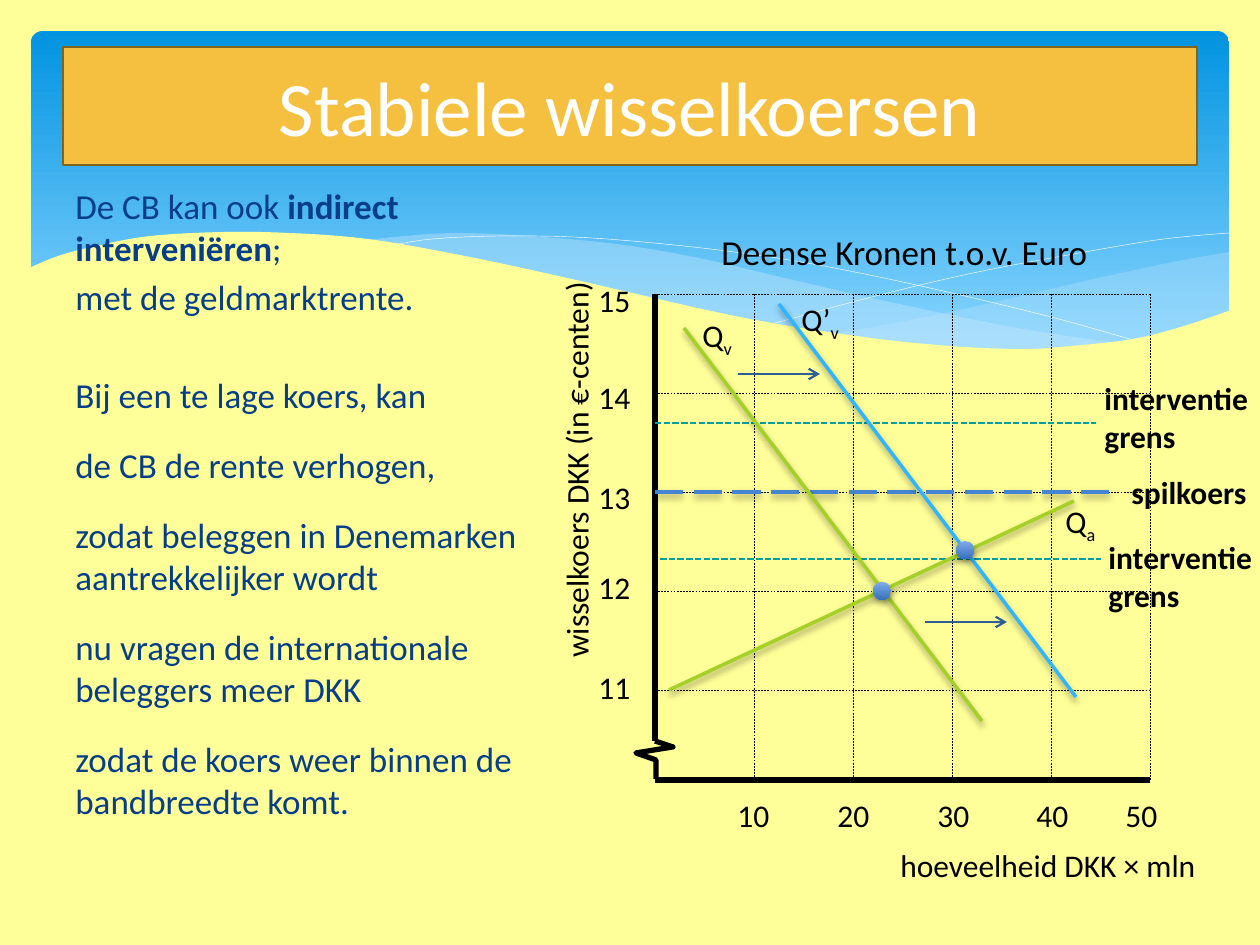
from dataclasses import dataclass

import pptx
import pptx.dml.color
import pptx.enum.dml
import pptx.enum.shapes
import pptx.enum.text
import pptx.oxml
import pptx.oxml.ns
import pptx.util
from lxml import etree

EMU_PER_PX = 914400 / 126
DASH = pptx.enum.dml.MSO_LINE
SHAPE = pptx.enum.shapes.MSO_SHAPE
ALIGN = pptx.enum.text.PP_ALIGN


@dataclass(frozen=True)
class Theme:
    font: str = "Calibri"
    title_size: int = 44
    body_size: int = 20
    label_size: int = 18
    background: str = "FFFF99"
    header: tuple = (("0293E0", 0), ("83D3FE", 0.9))
    dot: tuple = (("80ACEA", 0), ("3570BA", 1))
    band: str = "C6E7FC"
    white: str = "FFFFFF"
    black: str = "000000"
    title_fill: str = "F5C040"
    title_line: str = "806421"
    body: str = "073E87"
    supply: str = "A5D028"
    demand: str = "31B6FD"
    pivot: str = "4584D3"
    limit: str = "049E9B"
    arrow: str = "315D95"


THEME = Theme()

WAVE = [(1231, 310), (1184, 326), (1133, 339), (1071, 346), (1019, 349), (937, 345),
        (842, 334), (730, 315), (563, 277), (460, 255), (368, 239), (290, 233),
        (223, 232), (150, 236), (96, 246), (58, 256), (29, 268)]
RIGHT_BAND_TOP = [(1230, 252), (1178, 261), (1085, 281), (982, 305), (890, 324), (833, 334)]
RIGHT_BAND_BOTTOM = [(833, 334), (888, 341), (954, 348), (1026, 350), (1087, 347),
                     (1140, 339), (1187, 326), (1230, 311)]
LEFT_BAND_TOP = [(1125, 344), (1017, 328), (890, 302), (793, 280), (699, 258),
                 (616, 244), (529, 236), (455, 233), (394, 237), (360, 241)]
LEFT_BAND_BOTTOM = [(360, 241), (431, 251), (509, 266), (619, 292), (736, 318),
                    (838, 335), (927, 347), (1003, 350), (1068, 349), (1125, 344)]
FALLING_STRAND = [(389, 246), (433, 239), (505, 236), (591, 238), (701, 248),
                  (801, 262), (916, 285), (1047, 316), (1143, 343)]
RISING_STRAND = [(772, 324), (876, 296), (978, 272), (1091, 251), (1164, 239), (1229, 233)]
AXIS_BREAK = [(655, 741), (673, 747), (636, 753), (656, 760), (656, 779)]

LEFT, TOP, RIGHT, BOTTOM, STEP = 655, 294, 1150, 780, 99


def px(value):
    return pptx.util.Emu(round(value * EMU_PER_PX))


def rgb(value):
    return pptx.dml.color.RGBColor.from_string(value)


def add_child(parent, tag, **attributes):
    return etree.SubElement(parent, pptx.oxml.ns.qn(tag), **attributes)


def set_line(line, color, width, dash=None):
    line.color.rgb = rgb(color)
    line.width = pptx.util.Pt(width)
    if dash:
        line.dash_style = dash


def set_gradient(fill, stops):
    fill.gradient()
    fill.gradient_angle = 270
    for stop, (color, position) in zip(fill.gradient_stops, stops):
        stop.color.rgb = rgb(color)
        stop.position = position


def add_shadow(effects):
    shadow = add_child(effects, "a:outerShdw", blurRad="50800", dist="25400",
                       dir="5400000", rotWithShape="0")
    color = add_child(shadow, "a:srgbClr", val=THEME.black)
    add_child(color, "a:alpha", val="38000")


def add_preset(slide, kind, box):
    shape = slide.shapes.add_shape(kind, *map(px, box))
    shape.shadow.inherit = False
    shape.line.fill.background()
    return shape


def add_dot(slide, left, top):
    dot = add_preset(slide, SHAPE.OVAL, (left, top, 18, 18))
    set_gradient(dot.fill, THEME.dot)
    add_shadow(dot._element.spPr.find(pptx.oxml.ns.qn("a:effectLst")))


def add_line(slide, start, end, color, width, dash=None, shadow=False, arrow=False):
    connector = slide.shapes.add_connector(
        pptx.enum.shapes.MSO_CONNECTOR.STRAIGHT, *map(px, start + end))
    set_line(connector.line, color, width, dash)
    properties = connector._element.spPr
    if arrow:
        add_child(properties.find(pptx.oxml.ns.qn("a:ln")), "a:tailEnd", type="arrow")
    effects = add_child(properties, "a:effectLst")
    if shadow:
        add_shadow(effects)


def smooth(knots, steps=5):
    padded = [knots[0], *knots, knots[-1]]
    points = [knots[0]]
    for a, b, c, d in zip(padded, padded[1:], padded[2:], padded[3:]):
        for step in range(1, steps + 1):
            t = step / steps
            points.append(tuple(
                (2 * q + (r - p) * t + (2 * p - 5 * q + 4 * r - s) * t ** 2
                 + (3 * q - p - 3 * r + s) * t ** 3) / 2
                for p, q, r, s in zip(a, b, c, d)))
    return points


def add_outline(slide, points, fill=None, opacity=100, line=None, width=0.25):
    vertices = [(px(x), px(y)) for x, y in points]
    builder = slide.shapes.build_freeform(*vertices[0], scale=1.0)
    builder.add_line_segments(vertices[1:], close=fill is not None)
    shape = builder.convert_to_shape()
    shape.shadow.inherit = False
    if fill:
        shape.fill.solid()
        shape.fill.fore_color.rgb = rgb(fill)
        color = shape._element.spPr.find(".//" + pptx.oxml.ns.qn("a:srgbClr"))
        add_child(color, "a:alpha", val=str(opacity * 1000))
    else:
        shape.fill.background()
    if line:
        set_line(shape.line, line, width)
    else:
        shape.line.fill.background()


def add_text(slide, box, paragraphs, shape=None, size=THEME.label_size, color=THEME.black,
             bold=False, align=ALIGN.LEFT, wrap=False, rotation=0, spacing=None):
    shape = shape or slide.shapes.add_textbox(*map(px, box))
    shape.rotation = rotation
    frame = shape.text_frame
    frame.word_wrap = wrap
    if not wrap:
        frame.auto_size = pptx.enum.text.MSO_AUTO_SIZE.SHAPE_TO_FIT_TEXT
    for index, runs in enumerate(paragraphs):
        paragraph = frame.paragraphs[0] if index == 0 else frame.add_paragraph()
        paragraph.alignment = align
        if spacing:
            before, after = spacing[index]
            paragraph.space_before = pptx.util.Pt(before)
            paragraph.space_after = pptx.util.Pt(after)
        for text, style in [(runs, "")] if isinstance(runs, str) else runs:
            run = paragraph.add_run()
            run.text = text
            run.font.name = THEME.font
            run.font.size = pptx.util.Pt(size)
            run.font.color.rgb = rgb(color)
            run.font.bold = bold or style == "bold"
            if style == "subscript":
                run._r.get_or_add_rPr().set("baseline", "-25000")


def add_backdrop(slide):
    slide.background.fill.solid()
    slide.background.fill.fore_color.rgb = rgb(THEME.background)
    header = add_preset(slide, SHAPE.ROUNDED_RECTANGLE, (31, 31, 1198, 340))
    header.adjustments[0] = 0.034
    set_gradient(header.fill, THEME.header)
    add_outline(slide, smooth(RIGHT_BAND_TOP) + smooth(RIGHT_BAND_BOTTOM), THEME.band, 29)
    add_outline(slide, smooth(LEFT_BAND_TOP) + smooth(LEFT_BAND_BOTTOM), THEME.band, 40)
    for strand in (FALLING_STRAND, RISING_STRAND):
        add_outline(slide, smooth(strand), line=THEME.white)
    add_outline(slide, smooth(WAVE) + [(29, 415), (1231, 415)], THEME.background)


def add_title_and_body(slide):
    title = add_preset(slide, SHAPE.RECTANGLE, (63, 47, 1134, 118))
    title.fill.solid()
    title.fill.fore_color.rgb = rgb(THEME.title_fill)
    set_line(title.line, THEME.title_line, 1.25)
    add_text(slide, None, ["Stabiele wisselkoersen"], shape=title, size=THEME.title_size,
             color=THEME.white, align=ALIGN.CENTER, wrap=True)
    add_text(slide, (63, 178, 467, 732), [
        [("De CB kan ook ", ""), ("indirect interveniëren", "bold"), (";", "")],
        "met de geldmarktrente.",
        "Bij een te lage koers, kan",
        "de CB de rente verhogen,",
        "zodat beleggen in Denemarken aantrekkelijker wordt",
        "nu vragen de internationale beleggers meer DKK",
        "zodat de koers weer binnen de bandbreedte komt.",
    ], size=THEME.body_size, color=THEME.body, wrap=True,
        spacing=[(0, 0), (4, 0), (32, 12)] + [(4, 12)] * 4)


def add_axes(slide):
    add_line(slide, (LEFT, TOP), (LEFT, 741), THEME.black, 3)
    add_line(slide, (RIGHT, BOTTOM), (LEFT, BOTTOM), THEME.black, 3)
    for index in range(5):
        y, x = TOP + STEP * index, LEFT + STEP * (index + 1)
        add_line(slide, (LEFT, y), (RIGHT, y), THEME.black, 0.25, DASH.DASH)
        add_line(slide, (x, TOP), (x, BOTTOM), THEME.black, 0.25, DASH.DASH)
    add_outline(slide, AXIS_BREAK, line=THEME.black, width=3)
    for rate, top in zip(range(15, 10, -1), (275, 372, 472, 562, 662)):
        add_text(slide, (586, top, 58, 50), [str(rate)])
    for amount, left in zip(range(10, 60, 10), (725, 825, 925, 1024, 1113)):
        add_text(slide, (left, 790, 58, 50), [str(amount)])
    add_text(slide, (888, 840, 325, 50), ["hoeveelheid DKK × mln"])
    add_text(slide, (373, 442, 406, 50), ["wisselkoers DKK (in €-centen)"], rotation=270)
    add_text(slide, (709, 224, 394, 55), ["Deense Kronen t.o.v. Euro"], size=THEME.body_size)


def add_curves(slide):
    add_line(slide, (LEFT, 492), (1113, 492), THEME.pivot, 2, DASH.LONG_DASH, shadow=True)
    add_text(slide, (1119, 467, 141, 50), ["spilkoers"], bold=True)
    for left, y, label_left, label_top in ((655, 423, 1092, 373), (660, 559, 1096, 532)):
        add_line(slide, (left, y), (left + 441, y), THEME.limit, 1.25, DASH.SQUARE_DOT)
        add_text(slide, (label_left, label_top, 170, 89), ["interventie", "grens"], bold=True)
    for start, end, color in (((669, 690), (1074, 501), THEME.supply),
                              ((684, 328), (982, 721), THEME.supply),
                              ((779, 304), (1076, 697), THEME.demand)):
        add_line(slide, start, end, color, 2, shadow=True)
    for box, name, index in (((690, 310, 57, 50), "Q", "v"), ((1053, 496, 57, 50), "Q", "a"),
                             ((789, 294, 63, 50), "Q’", "v")):
        add_text(slide, box, [[(name, ""), (index, "subscript")]])
    add_dot(slide, 873, 582)
    add_dot(slide, 956, 541)
    for x, y in ((738, 374), (925, 622)):
        add_line(slide, (x, y), (x + 82, y), THEME.arrow, 1.25, arrow=True)


def main():
    presentation = pptx.Presentation()
    presentation.slide_width, presentation.slide_height = px(1260), px(945)
    slide = presentation.slides.add_slide(presentation.slide_layouts[6])
    add_backdrop(slide)
    add_title_and_body(slide)
    add_axes(slide)
    add_curves(slide)
    presentation.save("out.pptx")


if __name__ == "__main__":
    main()
